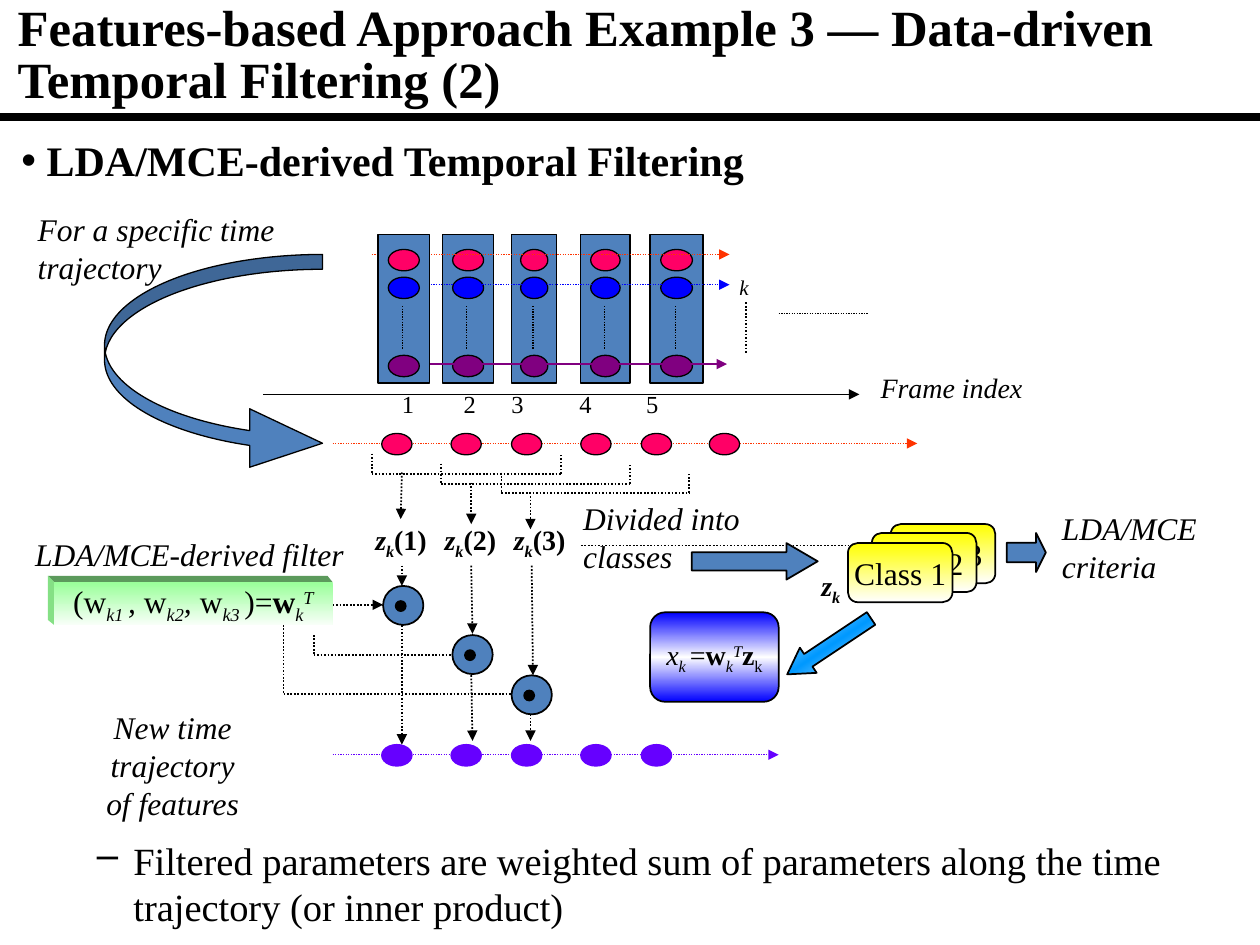
from copy import deepcopy
from pptx import Presentation
from pptx import util as u
from pptx.dml.color import RGBColor
from pptx.enum import dml, shapes, text
from pptx.oxml.ns import qn
from pptx.oxml.xmlchemy import OxmlElement

FONT = "Times New Roman"
COLORS = {"black": "000000", "steel": "4F81BD", "pink": "FF0066", "blue": "0000FF",
          "purple": "800080", "red": "FF3300", "violet": "6600FF", "yellow": "FFFF00",
          "white": "FFFFFF", "sky": "0099FF", "mint": "99FF99", "pale": "F8FFF8",
          "bevel_top": "5C9A5C", "bevel_left": "85E085"}
KIND = shapes.MSO_SHAPE
ALIGN = text.PP_ALIGN

TITLE = "Features-based Approach Example 3 ― Data-driven Temporal Filtering (2)"
TOPIC = "LDA/MCE-derived Temporal Filtering"
SUMMARY = ("Filtered parameters are weighted sum of parameters along the time "
           "trajectory (or inner product)")
FILTER = [("(w", ""), ("k1 ", "i_"), (",", "i"), (" w", ""), ("k2", "i_"), (", ", "i"),
          ("w", ""), ("k3 ", "i_"), (")=", ""), ("w", "b"), ("k", "i_"), ("T", "i^")]
PRODUCT = [("x", "i"), ("k ", "i_"), ("=", ""), ("w", "b"), ("k", "i_"), ("T", "i^"),
           ("z", "b"), ("k", "_")]
ZK = [("z", "bi"), ("k", "bi_")]
LABELS = [
    ((6.89, 2.89, 1.33, 0.37), 16, [("Frame index", "i")], ALIGN.LEFT, False),
    ((0.2, 1.62, 2.08, 0.7), 18, [("For a specific time\ntrajectory", "i")], ALIGN.LEFT, False),
    ((5.77, 2.13, 0.27, 0.3), 12, [("k", "i")], ALIGN.LEFT, False),
    ((0.28, 5.57, 2.18, 0.7), 18, [("New time trajectory\nof features", "i")], ALIGN.CENTER, False),
    ((0.18, 4.2, 2.78, 0.4), 18, [("LDA/MCE-derived filter", "i")], ALIGN.LEFT, True),
    ((4.53, 3.91, 2.21, 0.4), 18, [("Divided into classes", "i")], ALIGN.LEFT, False),
    ((6.42, 4.46, 0.36, 0.37), 16, ZK, ALIGN.LEFT, False),
    ((8.33, 3.99, 1.32, 0.7), 18, [("LDA/MCE criteria", "i")], ALIGN.LEFT, True),
]
FRAME_TABS = [0.49, 0.87, 1.41, 1.94]
COLUMNS = [(3, 0.41), (3.51, 0.41), (4.06, 0.36), (4.61, 0.39), (5.16, 0.42)]
COLUMN_DOTS = [(1.98, "pink"), (2.2, "blue"), (2.82, "purple")]
AXES = [(2.09, 3.13, 6.82, "black", False), (2.95, 2.02, 5.79, "red", True),
        (3.03, 2.26, 5.79, "blue", True), (3.19, 2.89, 5.77, "purple", False)]
TRACK_DOTS = [3.03, 3.58, 4.06, 4.61, 5.09, 5.63]
TRACKS = [(3.52, 7.28, "red", "pink", "black", 6), (5.99, 6.18, "violet", "violet", "violet", 5)]
WINDOWS = [(2.95, 3.6, 4.45), (3.5, 3.68, 5), (3.98, 3.75, 5.47)]
FLOWS = [(3.19, 3.75, 3.18, 4.12), (3.74, 3.83, 3.74, 4.16), (4.21, 3.91, 4.21, 4.2),
         (3.19, 4.49, 3.19, 4.65), (3.74, 4.49, 3.75, 5.03), (4.22, 4.49, 4.23, 5.36),
         (2.64, 4.8, 3.04, 4.8), (3.19, 4.88, 3.19, 5.91), (3.74, 5.33, 3.75, 5.88),
         (4.21, 5.64, 4.21, 5.88)]
DOTTED = [(5.92, 2.4, 5.92, 2.8), (4.61, 4.33, 6.74, 4.33), (2.49, 5.04, 2.49, 5.2),
          (2.49, 5.2, 3.74, 5.2), (2.25, 4.96, 2.25, 5.51), (2.25, 5.51, 4.06, 5.51)]
MULTIPLIERS = [(3.04, 4.65), (3.59, 5.04), (4.06, 5.36)]
CLASSES = [(7.07, 4.16, "3", ALIGN.RIGHT), (6.92, 4.23, "2", ALIGN.RIGHT),
           (6.73, 4.31, "Class 1", ALIGN.CENTER)]
BEVELS = [("bevel_top", [(0.43, 4.62), (0.38, 4.57), (2.6, 4.57), (2.64, 4.62)]),
          ("bevel_left", [(0.43, 4.62), (0.38, 4.57), (0.38, 4.92), (0.43, 4.96)])]


def inch(value):
    return u.Cm(value * 2.54)


def rgb(name):
    return RGBColor.from_string(COLORS[name])


def write(paragraph, runs, size):
    for words, style in runs:
        for n, line in enumerate(words.split("\n")):
            if n:
                paragraph.add_line_break()
            run = paragraph.add_run()
            run.text = line
            font = run.font
            font.name, font.size = FONT, u.Pt(size)
            font.bold, font.italic = "b" in style, "i" in style
            font.color.rgb = rgb("black")
            if "_" in style or "^" in style:
                run._r.get_or_add_rPr().set("baseline", "-25000" if "_" in style else "30000")


def bullet(paragraph, mark, indent):
    props = paragraph._p.get_or_add_pPr()
    props.set("marL", str(inch(indent)))
    props.set("indent", str(-inch(indent)))
    char = OxmlElement("a:buChar")
    char.set("char", mark)
    props.append(char)


def label(box, size, runs, align=ALIGN.LEFT, wrap=False):
    frame = slide.shapes.add_textbox(*map(inch, box)).text_frame
    frame.word_wrap = wrap
    paragraph = frame.paragraphs[0]
    paragraph.alignment = align
    write(paragraph, runs, size)
    return paragraph


def paint(shape, fill, line="black", width=0.75):
    shape.shadow.inherit = False
    if isinstance(fill, str):
        shape.fill.solid()
        shape.fill.fore_color.rgb = rgb(fill)
    else:
        shape.fill.gradient()
        shape.fill.gradient_angle = 270
        stop_list = shape.element.spPr.find(".//" + qn("a:gsLst"))
        while len(stop_list) < len(fill):
            stop_list.append(deepcopy(stop_list[-1]))
        for n, stop in enumerate(shape.fill.gradient_stops):
            stop.position = n / (len(fill) - 1)
            stop.color.rgb = rgb(fill[n])
    if line:
        shape.line.color.rgb = rgb(line)
        shape.line.width = u.Pt(width)
    else:
        shape.line.fill.background()
    return shape


def block(kind, box, fill, line="black", width=0.75, adjust=()):
    shape = slide.shapes.add_shape(kind, *map(inch, box))
    for n, value in enumerate(adjust):
        shape.adjustments[n] = value
    return paint(shape, fill, line, width)


def caption(shape, runs, size, align=ALIGN.CENTER):
    frame = shape.text_frame
    frame.word_wrap = False
    frame.vertical_anchor = text.MSO_ANCHOR.MIDDLE
    frame.margin_right = inch(0.08 if align == ALIGN.RIGHT else 0.1)
    frame.paragraphs[0].alignment = align
    write(frame.paragraphs[0], runs, size)


def link(ends, color="black", width=1, dotted=True, arrow=False):
    line = slide.shapes.add_connector(shapes.MSO_CONNECTOR.STRAIGHT, *map(inch, ends))
    line.line.color.rgb = rgb(color)
    line.line.width = u.Pt(width)
    if dotted:
        line.line.dash_style = dml.MSO_LINE.ROUND_DOT
    props = line.element.spPr
    if arrow:
        head = OxmlElement("a:tailEnd")
        head.set("type", "triangle")
        props.find(qn("a:ln")).append(head)
    props.append(OxmlElement("a:effectLst"))


def column(left, width):
    block(KIND.RECTANGLE, (left, 1.86, width, 1.18), "steel")
    for top, color in COLUMN_DOTS:
        block(KIND.FLOWCHART_CONNECTOR, (left + width * 0.2, top, width * 0.6, 0.17), color)
    middle = left + width / 2 - 0.01
    link((middle, 2.43, middle, 2.77), width=0.75)


prs = Presentation()
prs.slide_width, prs.slide_height = inch(10), inch(7.5)
slide = prs.slides.add_slide(prs.slide_layouts[1])
title, topic = slide.placeholders
for holder, box, words, size in ((title, (0.04, -0.01, 9.96, 0.79), TITLE, 29),
                                 (topic, (0.07, 1.02, 9.57, 0.53), TOPIC, 24)):
    holder.left, holder.top, holder.width, holder.height = map(inch, box)
    holder.text_frame.auto_size = text.MSO_AUTO_SIZE.NONE
    holder.text_frame.vertical_anchor = text.MSO_ANCHOR.TOP
    holder.text_frame.paragraphs[0].alignment = ALIGN.LEFT
    write(holder.text_frame.paragraphs[0], [(words, "b")], size)
title.text_frame.paragraphs[0].line_spacing = 0.85
topic.text_frame.paragraphs[0].space_before = u.Pt(2)
bullet(topic.text_frame.paragraphs[0], "•", 0.2)
bullet(label((0.67, 6.59, 9.33, 0.83), 22, [(SUMMARY, "")], wrap=True), "–", 0.29)

for left, width in COLUMNS[1:]:
    column(left, width)
link((6.18, 2.49, 6.89, 2.49), width=0.75)
for start, y, end, color, dotted in AXES:
    link((start, y, end, y), color, 0.75, dotted, True)
column(*COLUMNS[0])

frames = label((3.09, 3.04, 2.85, 0.33), 14, [("1\t2\t3\t4\t5", "")], wrap=True)
tab_list = OxmlElement("a:tabLst")
for position in FRAME_TABS:
    tab = OxmlElement("a:tab")
    tab.set("pos", str(inch(position)))
    tab.set("algn", "l")
    tab_list.append(tab)
frames._p.get_or_add_pPr().append(tab_list)

for y, end, axis, fill, outline, count in TRACKS:
    link((2.64, y, end, y), axis, 0.75, True, True)
    for left in TRACK_DOTS[:count]:
        block(KIND.FLOWCHART_CONNECTOR, (left, y - 0.08, 0.24, 0.17), fill, outline)
block(KIND.CURVED_RIGHT_ARROW, (0.83, 2.02, 1.73, 1.73), "steel", adjust=(0.068, 0.268, 0.334))

for left, top, right in WINDOWS:
    base = top + 0.16
    for ends in ((left, top, left, base), (left, base, right, base), (right, base, right, top)):
        link(ends)
for ends in DOTTED:
    link(ends)
for ends in FLOWS:
    link(ends, arrow=True)

for color, (start, *corners) in BEVELS:
    outline = slide.shapes.build_freeform(*map(inch, start))
    outline.add_line_segments([tuple(map(inch, corner)) for corner in corners])
    paint(outline.convert_to_shape(), color, None)
caption(block(KIND.RECTANGLE, (0.43, 4.62, 2.21, 0.34), ("mint", "pale"), None), FILTER, 18)
for left, top in MULTIPLIERS:
    block(KIND.FLOWCHART_CONNECTOR, (left, top, 0.32, 0.31), "steel", width=1)
    block(KIND.FLOWCHART_CONNECTOR, (left + 0.1, top + 0.12, 0.08, 0.08), "black", width=1)

block(KIND.RIGHT_ARROW, (5.49, 4.31, 1, 0.29), "steel", width=1, adjust=(0.5, 0.855))
block(KIND.RIGHT_ARROW, (7.99, 4.23, 0.31, 0.31), "steel", width=1, adjust=(0.5, 0.25))
for left, top, words, align in CLASSES:
    card = block(KIND.ROUNDED_RECTANGLE, (left, top, 0.83, 0.47), ("yellow", "white"), width=1)
    caption(card, [(words, "")], 18, align)
caption(block(KIND.ROUNDED_RECTANGLE, (5.16, 4.86, 1.02, 0.71), ("blue", "white", "blue"), width=1),
        PRODUCT, 16)
block(KIND.RIGHT_ARROW, (6.18, 5.01, 0.8, 0.24), ("white", "sky", "white"), width=1,
      adjust=(0.5, 0.836)).rotation = 146.3

for details in LABELS:
    label(*details)
for n, left in enumerate((2.88, 3.43, 3.98), 1):
    label((left, 4.1, 0.62, 0.37), 16, ZK + [(f"({n})", "b")])
link((0, 0.93, 10, 0.93), width=4.5, dotted=False)
prs.save("out.pptx")
